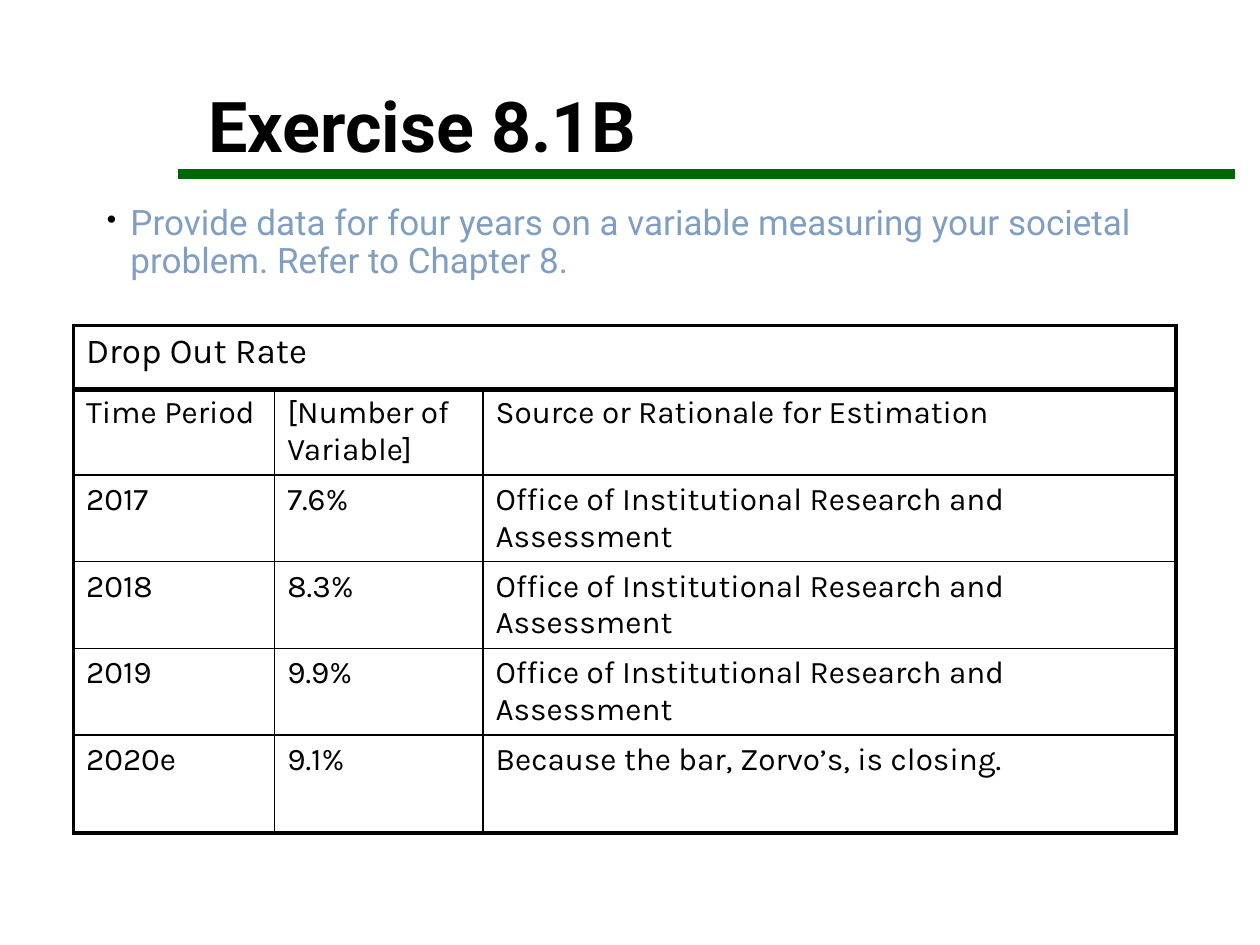
from lxml import etree
from pptx import Presentation
from pptx.dml.color import RGBColor
from pptx.enum.shapes import MSO_CONNECTOR
from pptx.enum.text import MSO_ANCHOR
from pptx.oxml.ns import qn
from pptx.util import Pt

STRAIGHT = MSO_CONNECTOR.STRAIGHT
BOTTOM = MSO_ANCHOR.BOTTOM
TOP = MSO_ANCHOR.TOP

BLACK = RGBColor(0x00, 0x00, 0x00)
GREEN = RGBColor(0x00, 0x66, 0x00)
BLUE = RGBColor(0x80, 0x9E, 0xC2)

HEADING_FONT = "Roboto"
TABLE_FONT = "Karla"
THICK, THIN = 2.25, 1

TITLE_LEFT, TITLE_RIGHT = 102, 706
RULE_TOP = 99.5
TABLE_LEFT = 42
COLUMN_WIDTHS = [115, 119, 396]
ROW_HEIGHTS = [49.5, 49.5, 49.5, 49.5, 56]
OFFICE = "Office of Institutional Research and Assessment"
DATA_ROWS = [
    ["Time Period", "[Number of Variable]", "Source or Rationale for Estimation"],
    ["2017", "7.6%", OFFICE],
    ["2018", "8.3%", OFFICE],
    ["2019", "9.9%", OFFICE],
    ["2020e", "9.1%", "Because the bar, Zorvo’s, is closing."],
]


def add_run(paragraph, text, font_name, size, color, bold=False):
    run = paragraph.add_run()
    run.text = text
    font = run.font
    font.name = font_name
    font.size = Pt(size)
    font.bold = bold
    font.color.rgb = color


def add_text_frame(slide, left, top, width, height, anchor):
    box = slide.shapes.add_textbox(Pt(left), Pt(top), Pt(width), Pt(height))
    frame = box.text_frame
    frame.word_wrap = True
    frame.vertical_anchor = anchor
    frame.paragraphs[0].line_spacing = 0.9
    return frame


def add_title(slide, text):
    width = TITLE_RIGHT - TITLE_LEFT
    frame = add_text_frame(slide, TITLE_LEFT, 18, width, RULE_TOP - 18, BOTTOM)
    frame.margin_left = Pt(17)
    add_run(frame.paragraphs[0], text, HEADING_FONT, 40, BLACK, bold=True)


def add_title_rule(slide):
    line = slide.shapes.add_connector(
        STRAIGHT, Pt(TITLE_LEFT), Pt(RULE_TOP), Pt(TITLE_RIGHT), Pt(RULE_TOP)
    )
    line.line.color.rgb = GREEN
    line.line.width = Pt(6)
    etree.SubElement(line._element.spPr, qn("a:effectLst"))


def add_bullet(paragraph, indent, hanging):
    properties = paragraph._p.get_or_add_pPr()
    properties.set("marL", str(Pt(indent)))
    properties.set("indent", str(-Pt(hanging)))
    color = etree.SubElement(properties, qn("a:buClr"))
    etree.SubElement(color, qn("a:srgbClr"), val=str(BLACK))
    etree.SubElement(properties, qn("a:buSzPct"), val="80000")
    etree.SubElement(properties, qn("a:buChar"), char="•")


def add_instruction(slide, text):
    paragraph = add_text_frame(slide, 51, 114, 612, 72, TOP).paragraphs[0]
    add_bullet(paragraph, 16.5, 13.5)
    add_run(paragraph, text, HEADING_FONT, 20, BLUE)


def set_borders(cell, widths):
    """Draw black borders; widths run left, right, top, bottom."""
    properties = cell._tc.get_or_add_tcPr()
    for position, (side, width) in enumerate(zip("LRTB", widths)):
        border = etree.Element(qn(f"a:ln{side}"), w=str(Pt(width)))
        fill = etree.SubElement(border, qn("a:solidFill"))
        etree.SubElement(fill, qn("a:srgbClr"), val=str(BLACK))
        properties.insert(position, border)


def add_grid(slide, top, column_widths, row_heights, texts, size):
    """Add a table with a thick outline and thin inner borders."""
    row_count, column_count = len(row_heights), len(column_widths)
    table = slide.shapes.add_table(
        row_count, column_count, Pt(TABLE_LEFT), Pt(top),
        Pt(sum(column_widths)), Pt(sum(row_heights)),
    ).table
    table.first_row = False
    table.horz_banding = False
    for column, width in zip(table.columns, column_widths):
        column.width = Pt(width)
    for row, height in zip(table.rows, row_heights):
        row.height = Pt(height)
    for r, row_texts in enumerate(texts):
        for c, text in enumerate(row_texts):
            cell = table.cell(r, c)
            cell.fill.background()
            cell.margin_bottom = Pt(2)
            on_outline = (c == 0, c == column_count - 1, r == 0, r == row_count - 1)
            set_borders(cell, [THICK if outer else THIN for outer in on_outline])
            add_run(cell.text_frame.paragraphs[0], text, TABLE_FONT, size, BLACK)


def main():
    presentation = Presentation()
    presentation.slide_width = Pt(720)
    presentation.slide_height = Pt(540)
    slide = presentation.slides.add_slide(presentation.slide_layouts[6])

    add_title_rule(slide)
    add_title(slide, "Exercise 8.1B")
    add_instruction(
        slide,
        "Provide data for four years on a variable measuring your societal "
        "problem. Refer to Chapter 8.",
    )
    add_grid(slide, 186, [sum(COLUMN_WIDTHS)], [37], [["Drop Out Rate"]], 20)
    add_grid(slide, 222, COLUMN_WIDTHS, ROW_HEIGHTS, DATA_ROWS, 18)
    presentation.save("out.pptx")


if __name__ == "__main__":
    main()
